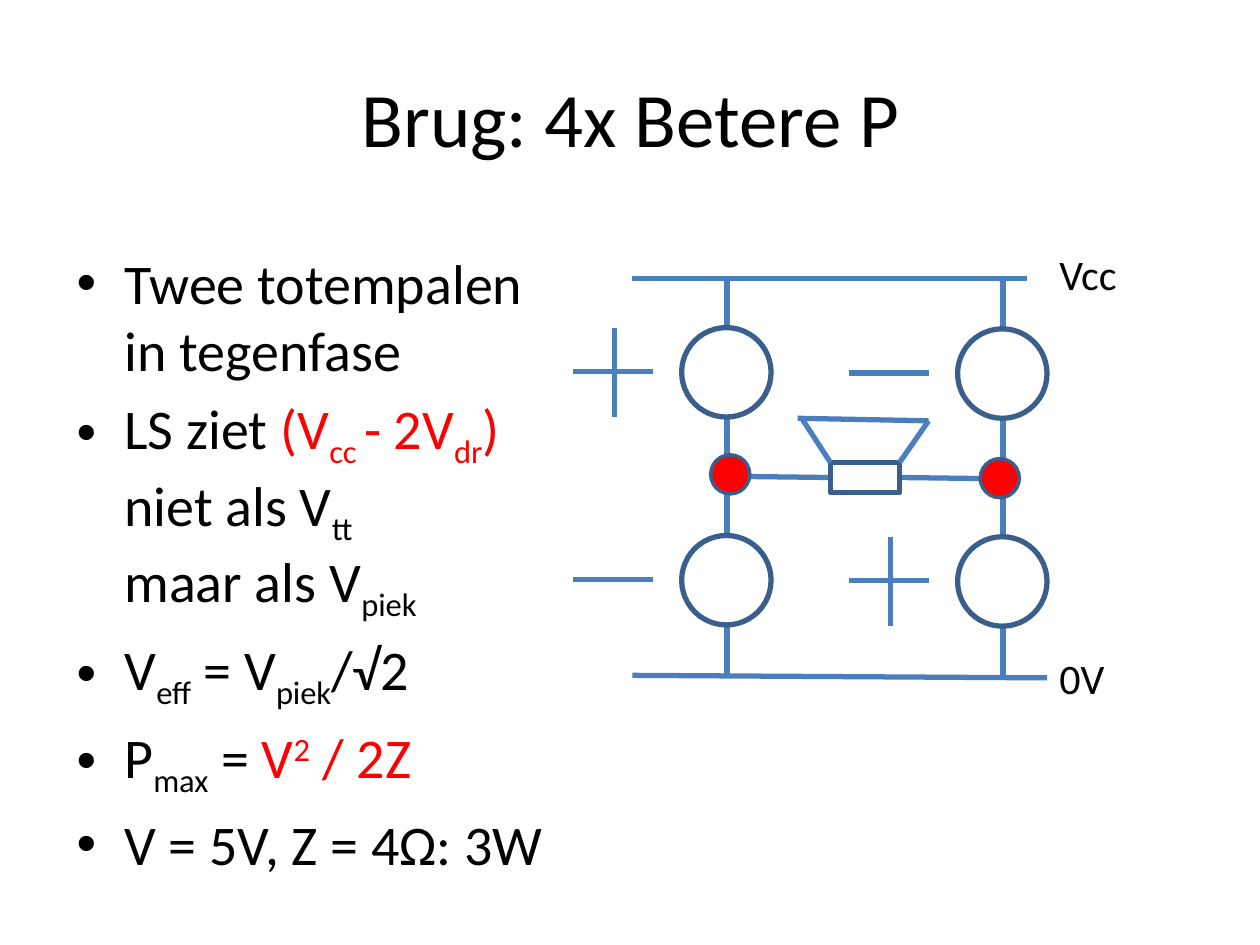
from lxml.etree import SubElement
from pptx import Presentation
from pptx.dml.color import RGBColor
from pptx.enum.shapes import MSO_CONNECTOR, MSO_SHAPE
from pptx.enum.text import MSO_ANCHOR, PP_ALIGN
from pptx.oxml.ns import qn
from pptx.util import Emu, Pt

PX = 9144
FONT = "Calibri"
BLACK = RGBColor(0x00, 0x00, 0x00)
RED = RGBColor(0xFF, 0x00, 0x00)
WIRE = RGBColor(0x4B, 0x7E, 0xBC)
EDGE = RGBColor(0x3A, 0x5F, 0x8C)
SUB, SUP = -25000, 30000

BULLETS = [
    [[("Twee totempalen ",)], [("in tegenfase",)]],
    [
        [("LS ziet ",), ("(V", RED), ("cc ", RED, SUB), ("- 2V", RED),
         ("dr", RED, SUB), (") ", RED)],
        [("niet als V",), ("tt ", BLACK, SUB)],
        [("maar als V",), ("piek", BLACK, SUB)],
    ],
    [[("V",), ("eff", BLACK, SUB), (" = V",), ("piek", BLACK, SUB), ("/√2",)]],
    [[("P",), ("max", BLACK, SUB), (" = ",), ("V", RED), ("2", RED, SUP),
      (" / 2Z", RED)]],
    [[("V = 5V, Z = 4Ω: 3W",)]],
]


def px(*values):
    return [Emu(v * PX) for v in values]


def add_run(p, size, text, color=BLACK, baseline=0):
    r = p.add_run()
    r.text = text
    r.font.name = FONT
    r.font.size = Pt(size)
    r.font.color.rgb = color
    if baseline:
        r.font._element.set("baseline", str(baseline))


def add_text_frame(slide, x, y, w, h):
    tf = slide.shapes.add_textbox(*px(x, y, w, h)).text_frame
    tf.word_wrap = True
    return tf


def add_line(slide, x1, y1, x2, y2):
    ln = slide.shapes.add_connector(MSO_CONNECTOR.STRAIGHT, *px(x1, y1, x2, y2))
    ln.line.color.rgb = WIRE
    ln.line.width = Pt(3)
    SubElement(ln._element.spPr, qn("a:effectLst"))


def add_part(slide, kind, x, y, w, h, fill=None, width=3):
    sp = slide.shapes.add_shape(kind, *px(x, y, w, h))
    sp.shadow.inherit = False
    if fill is None:
        sp.fill.background()
    else:
        sp.fill.solid()
        sp.fill.fore_color.rgb = fill
    sp.line.color.rgb = EDGE
    sp.line.width = Pt(width)


def add_title(slide, x, y, w, h):
    tf = add_text_frame(slide, x, y, w, h)
    tf.vertical_anchor = MSO_ANCHOR.MIDDLE
    p = tf.paragraphs[0]
    p.alignment = PP_ALIGN.CENTER
    add_run(p, 44, "Brug: 4x Betere P")


def format_bullet(p):
    pPr = p._p.get_or_add_pPr()
    pPr.set("marL", str(38 * PX))
    pPr.set("indent", str(-38 * PX))
    SubElement(SubElement(pPr, qn("a:spcBef")), qn("a:spcPct")).set("val", "20000")
    SubElement(pPr, qn("a:buFont")).set("typeface", "Arial")
    SubElement(pPr, qn("a:buChar")).set("char", "•")


def add_bullets(slide, x, y, w, h):
    tf = add_text_frame(slide, x, y, w, h)
    for i, lines in enumerate(BULLETS):
        p = tf.add_paragraph() if i else tf.paragraphs[0]
        format_bullet(p)
        for j, runs in enumerate(lines):
            if j:
                p.add_line_break()
            for run in runs:
                add_run(p, 32, *run)


def add_label(slide, x, y, text):
    tf = add_text_frame(slide, x, y, 79, 50)
    add_run(tf.paragraphs[0], 24, text)


def add_totem_pole(slide, x, y, plus_on_top):
    for top, bottom in ((0, 39), (110, 204), (275, 315)):
        add_line(slide, x + 122, y + top, x + 122, y + bottom)
    for top, plus in ((39, plus_on_top), (204, not plus_on_top)):
        add_part(slide, MSO_SHAPE.OVAL, x + 86, y + top, 71, 71)
        add_line(slide, x, y + top + 35, x + 63, y + top + 35)
        if plus:
            add_line(slide, x + 33, y + top, x + 33, y + top + 71)


def add_speaker(slide, x, y):
    add_line(slide, x, y + 46, x + 82, y + 47)
    add_line(slide, x + 137, y + 47, x + 219, y + 48)
    add_part(slide, MSO_SHAPE.RECTANGLE, x + 82, y + 35, 55, 24)
    add_line(slide, x + 60, y + 1, x + 82, y + 35)
    add_line(slide, x + 56, y, x + 160, y + 2)
    add_line(slide, x + 160, y + 2, x + 137, y + 35)
    for left, top in ((-13, 29), (201, 32)):
        add_part(slide, MSO_SHAPE.OVAL, x + left, y + top, 31, 31, RED, 2)


def add_bridge(slide, x, y):
    add_line(slide, x + 47, y, x + 360, y)
    add_line(slide, x + 47, y + 315, x + 376, y + 317)
    add_totem_pole(slide, x, y, True)
    add_totem_pole(slide, x + 219, y + 1, False)
    add_speaker(slide, x + 122, y + 111)
    add_label(slide, x + 376, y - 29, "Vcc")
    add_label(slide, x + 376, y + 292, "0V")


def main():
    prs = Presentation()
    prs.slide_width, prs.slide_height = px(1000, 750)
    slide = prs.slides.add_slide(prs.slide_layouts[6])
    add_title(slide, 20, 30, 961, 125)
    add_bullets(slide, 51, 192, 764, 537)
    add_bridge(slide, 455, 221)
    prs.save("out.pptx")


if __name__ == "__main__":
    main()
